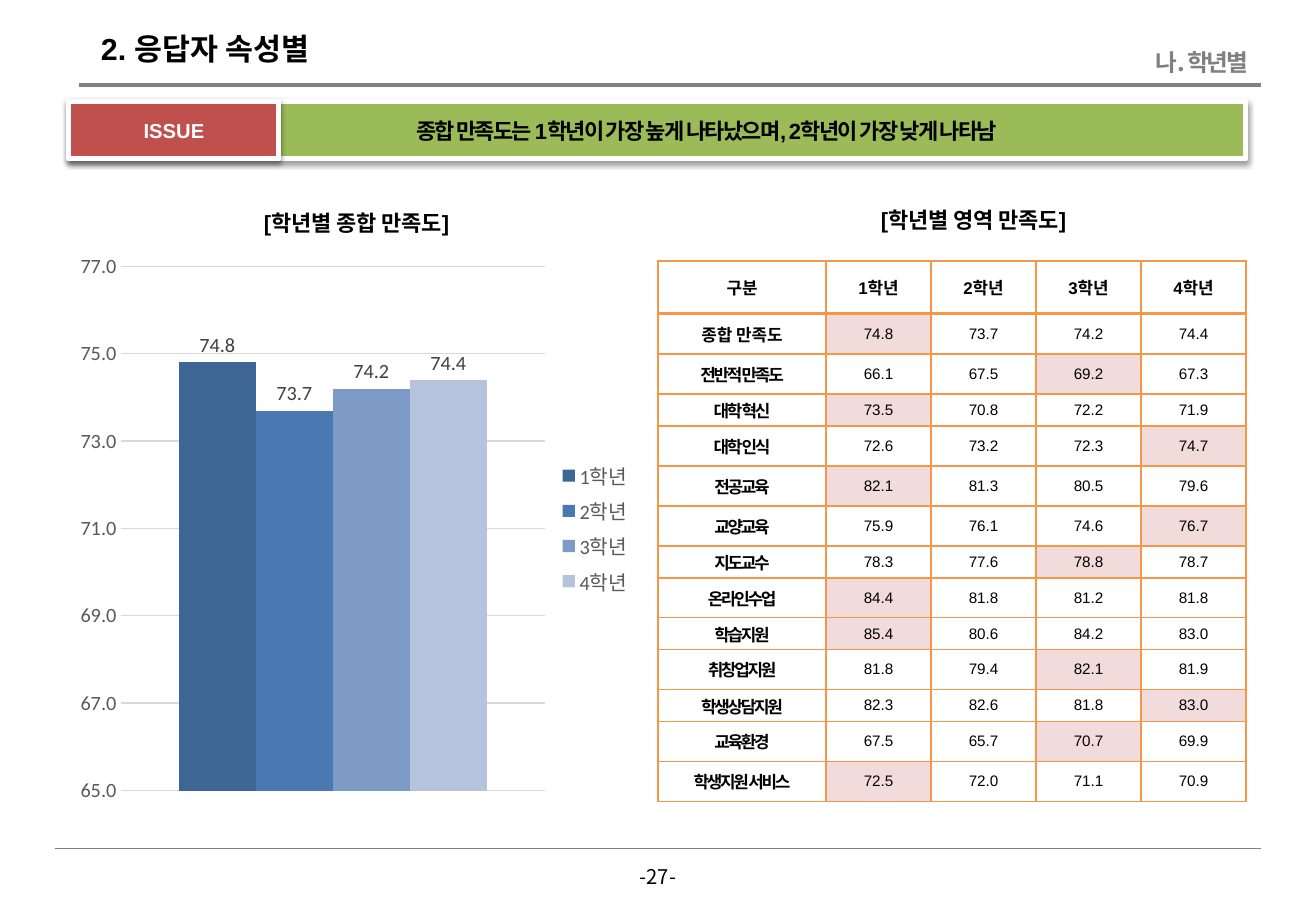
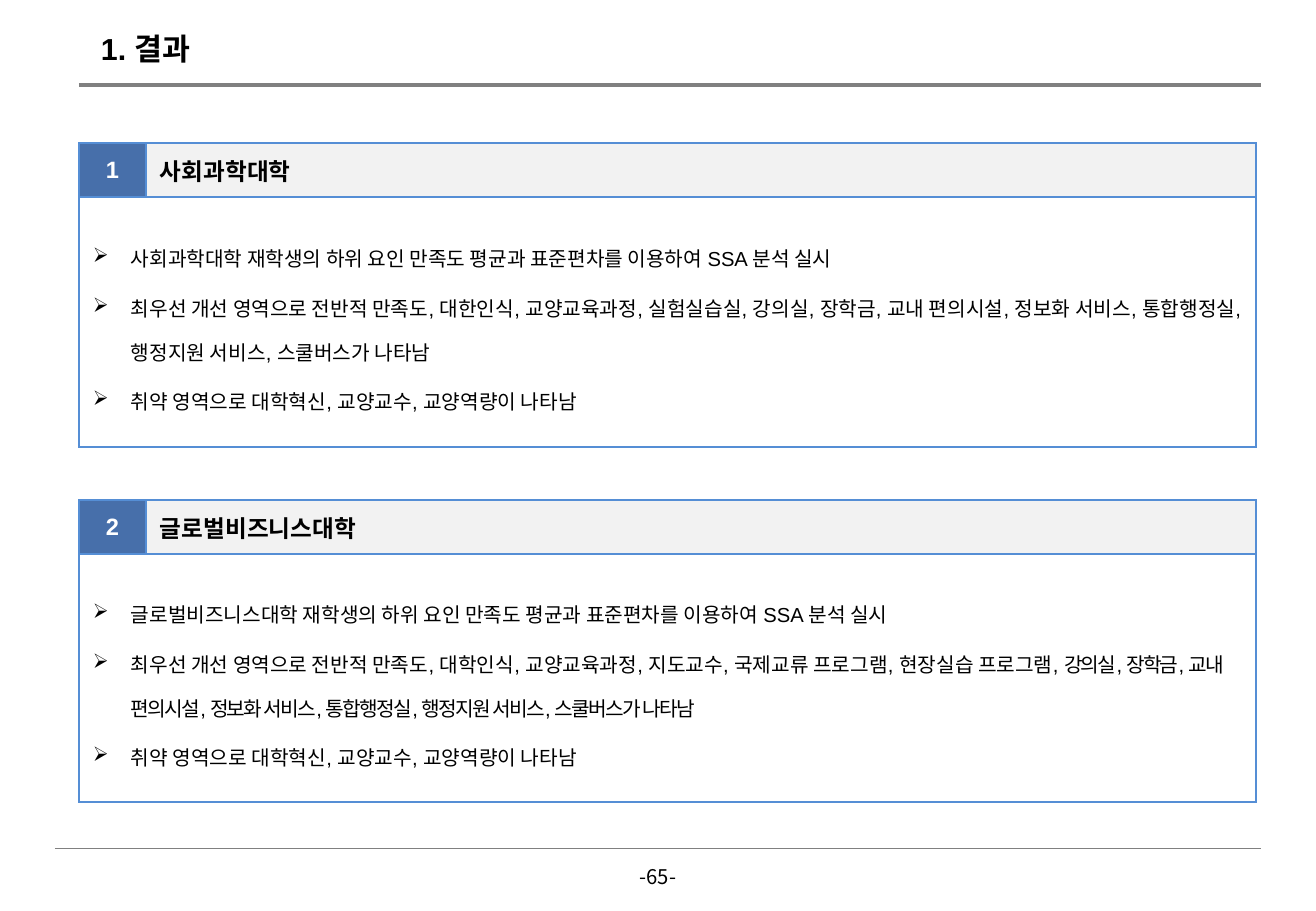
from lxml import etree
from pptx import Presentation
from pptx import util as u
from pptx.chart.data import CategoryChartData
from pptx.dml.color import RGBColor
from pptx.enum import chart as charts, shapes, text
from pptx.oxml import parse_xml
from pptx.oxml.ns import nsdecls, qn

# Colours and fonts
BLACK = RGBColor(0x00, 0x00, 0x00)
WHITE = RGBColor(0xFF, 0xFF, 0xFF)
GRAY = RGBColor(0x80, 0x80, 0x80)
PALE_GRAY = RGBColor(0xF2, 0xF2, 0xF2)
GRID_GRAY = RGBColor(0xD9, 0xD9, 0xD9)
AXIS_GRAY = RGBColor(0x59, 0x59, 0x59)
LABEL_GRAY = RGBColor(0x40, 0x40, 0x40)
GREEN = RGBColor(0x9B, 0xBB, 0x59)
RED = RGBColor(0xC0, 0x50, 0x4D)
PINK = RGBColor(0xF2, 0xDC, 0xDB)
ORANGE = RGBColor(0xF7, 0x96, 0x46)
SKY_BLUE = RGBColor(0x55, 0x8E, 0xD5)
BLUE = RGBColor(0x47, 0x6F, 0xAA)
SERIES_COLORS = [RGBColor(0x3E, 0x66, 0x95), RGBColor(0x4A, 0x79, 0xB1),
                 RGBColor(0x7E, 0x9B, 0xC8), RGBColor(0xB6, 0xC3, 0xDC)]
SANS, KOREAN, CHART_FONT = "Arial", "Noto Sans CJK KR", "Calibri"
LEFT, CENTER, RIGHT = text.PP_ALIGN.LEFT, text.PP_ALIGN.CENTER, text.PP_ALIGN.RIGHT
EMU_PER_PX = 914400 / 121.5

# Content of the grade slide
GRADES = ["1학년", "2학년", "3학년", "4학년"]
ISSUE = "종합 만족도는 1학년이 가장 높게 나타났으며, 2학년이 가장 낮게 나타남"
SCORES = [  # label, row height, score per grade
    ("종합 만족도", 40, (74.8, 73.7, 74.2, 74.4)),
    ("전반적 만족도", 40, (66.1, 67.5, 69.2, 67.3)),
    ("대학 혁신", 32, (73.5, 70.8, 72.2, 71.9)),
    ("대학 인식", 40, (72.6, 73.2, 72.3, 74.7)),
    ("전공교육", 40, (82.1, 81.3, 80.5, 79.6)),
    ("교양교육", 40, (75.9, 76.1, 74.6, 76.7)),
    ("지도교수", 32, (78.3, 77.6, 78.8, 78.7)),
    ("온라인수업", 40, (84.4, 81.8, 81.2, 81.8)),
    ("학습지원", 32, (85.4, 80.6, 84.2, 83.0)),
    ("취창업지원", 40, (81.8, 79.4, 82.1, 81.9)),
    ("학생상담지원", 32, (82.3, 82.6, 81.8, 83.0)),
    ("교육환경", 40, (67.5, 65.7, 70.7, 69.9)),
    ("학생지원 서비스", 40, (72.5, 72.0, 71.1, 70.9)),
]

# Content of the result slide: college, top, body height, bullets of (text, spacing) runs
WEAK_AREAS = [("취약 영역으로 대학혁신, 교양교수, 교양역량이 나타남", 0)]
COLLEGES = [
    ("사회과학대학", 143, 250, [
        [("사회과학대학 재학생의 하위 요인 만족도 평균과 표준편차를 이용하여 SSA 분석 실시", 0)],
        [("최우선 개선 영역으로 전반적 만족도, 대한인식, 교양교육과정, 실험실습실, 강의실, 장학금, "
          "교내 편의시설, 정보화 서비스, 통합행정실, 행정지원 서비스, 스쿨버스가 나타남", 0)],
        WEAK_AREAS]),
    ("글로벌비즈니스대학", 500, 248, [
        [("글로벌비즈니스대학 재학생의 하위 요인 만족도 평균과 표준편차를 이용하여 SSA 분석 실시", 0)],
        [("최우선 개선 영역으로 전반적 만족도, 대학인식, 교양교육과정, 지도교수, "
          "국제교류 프로그램, 현장실습 프로그램, ", 0),
         ("강의실, 장학금, 교내 편의시설, 정보화 서비스, 통합행정실, 행정지원 서비스, "
          "스쿨버스가 나타남", -1)],
        WEAK_AREAS]),
]


def px(value):
    return u.Emu(round(value * EMU_PER_PX))


def box(*lengths):
    return [px(length) for length in lengths]


# Text
def style(paragraph, size, color=BLACK, bold=True, font=SANS, align=CENTER, spacing=0):
    paragraph.alignment = align
    paragraph.font.size = u.Pt(size)
    paragraph.font.bold = bold
    paragraph.font.name = font
    paragraph.font.color.rgb = color
    if spacing:
        paragraph._p.pPr.find(qn("a:defRPr")).set("spc", str(round(spacing * 100)))


def add_text(slide, place, words, size, **look):
    frame = slide.shapes.add_textbox(*box(*place)).text_frame
    frame.word_wrap = True
    frame.vertical_anchor = text.MSO_ANCHOR.MIDDLE
    frame.text = words
    style(frame.paragraphs[0], size, **look)


def write_bullets(frame, bullets):
    for index, runs in enumerate(bullets):
        paragraph = frame.add_paragraph() if index else frame.paragraphs[0]
        properties = paragraph._p.get_or_add_pPr()
        properties.set("marL", str(px(38)))
        properties.set("indent", str(-px(38)))
        etree.SubElement(properties, qn("a:buChar")).set("char", "➢")
        paragraph.line_spacing = 1.5
        if index:
            paragraph.space_before = u.Pt(3)
        for words, spacing in runs:
            run = paragraph.add_run()
            run.text = words
            if spacing:
                run._r.get_or_add_rPr().set("spc", str(spacing * 100))
        style(paragraph, 12, bold=False, align=LEFT)


# Shared frame: rules, title and page number
def add_rule(slide, left, top, width):
    line = slide.shapes.add_connector(shapes.MSO_CONNECTOR.STRAIGHT, *box(left, top, 1261, top))
    line.line.color.rgb = GRAY
    line.line.width = u.Pt(width)
    etree.SubElement(line._element.spPr, qn("a:effectLst"))


def add_page(presentation, title, number):
    slide = presentation.slides.add_slide(presentation.slide_layouts[6])
    add_rule(slide, 79, 85, 2)
    add_rule(slide, 55, 848, 0.5)
    add_text(slide, (89, 24, 500, 49), title, 18, align=LEFT)
    add_text(slide, (608, 858, 100, 36), f"-{number}-", 12, bold=False, font=KOREAN)
    return slide


# Tables
def add_table(slide, left, top, widths, heights):
    table = slide.shapes.add_table(
        len(heights), len(widths), *box(left, top, sum(widths), sum(heights))).table
    table.first_row = table.horz_banding = False
    for column, width in zip(table.columns, widths):
        column.width = px(width)
    for row, height in zip(table.rows, heights):
        row.height = px(height)
    return table


def format_cell(cell, border, fill=None, insets=(0, 0), bottom=1):
    properties = cell._tc.get_or_add_tcPr()
    for side in "LRTB":
        width = u.Pt(bottom if side == "B" else 1)
        properties.append(parse_xml(
            f'<a:ln{side} {nsdecls("a")} w="{width}"><a:solidFill>'
            f'<a:srgbClr val="{border}"/></a:solidFill></a:ln{side}>'))
    if fill is None:
        cell.fill.background()
    else:
        cell.fill.solid()
        cell.fill.fore_color.rgb = fill
    cell.margin_left = cell.margin_right = px(insets[0])
    cell.margin_top = cell.margin_bottom = px(insets[1])
    cell.vertical_anchor = text.MSO_ANCHOR.MIDDLE


def write_cell(cell, words, size, **look):
    cell.text = words
    style(cell.text_frame.paragraphs[0], size, **look)


def add_score_table(slide):
    table = add_table(slide, 658, 261, [168] + [105] * len(GRADES),
                      [53] + [height for _, height, _ in SCORES])
    for column, words in enumerate(["구분"] + GRADES):
        cell = table.cell(0, column)
        format_cell(cell, ORANGE, insets=(0, 4), bottom=2)
        write_cell(cell, words, 10)
    for row, (label, _, scores) in enumerate(SCORES, 1):
        cell = table.cell(row, 0)
        format_cell(cell, ORANGE, insets=(4, 4))
        write_cell(cell, label, 10, spacing=0 if row == 1 else -1.3)
        for column, score in enumerate(scores, 1):
            cell = table.cell(row, column)
            # The best grade of each row is tinted
            format_cell(cell, ORANGE, PINK if score == max(scores) else None, (1, 1))
            write_cell(cell, f"{score:.1f}", 9, bold=False)


def add_college_table(slide, number, college, top, body_height, bullets):
    table = add_table(slide, 79, top, [67, 1110], [54, body_height])
    for cell, fill in zip(table.iter_cells(), (BLUE, PALE_GRAY, WHITE, WHITE)):
        format_cell(cell, SKY_BLUE, fill, (14, 10))
    write_cell(table.cell(0, 0), str(number), 14, color=WHITE)
    write_cell(table.cell(0, 1), college, 14, align=LEFT)
    table.cell(1, 0).merge(table.cell(1, 1))
    write_bullets(table.cell(1, 0).text_frame, bullets)


# Issue banner
def add_band(slide, width, fill, words, size, left_inset=12, **look):
    band = slide.shapes.add_shape(shapes.MSO_SHAPE.RECTANGLE, *box(69, 102, width, 57))
    band.fill.solid()
    band.fill.fore_color.rgb = fill
    band.line.color.rgb = WHITE
    band.line.width = u.Pt(3)
    band.shadow.inherit = False
    band._element.spPr.find(qn("a:effectLst")).append(parse_xml(
        f'<a:outerShdw {nsdecls("a")} blurRad="{u.Pt(3.1)}" dist="{u.Pt(1.6)}" dir="5400000" '
        'rotWithShape="0"><a:srgbClr val="000000"><a:alpha val="38000"/></a:srgbClr>'
        '</a:outerShdw>'))
    frame = band.text_frame
    frame.margin_left = px(left_inset)
    frame.vertical_anchor = text.MSO_ANCHOR.MIDDLE
    frame.text = words
    style(frame.paragraphs[0], size, **look)


# Chart
def set_font(font, size, color):
    font.name = CHART_FONT
    font.size = u.Pt(size)
    font.color.rgb = color


def add_score_chart(slide):
    data = CategoryChartData(number_format="###0.0")
    data.categories = ["1"]
    for grade, score in zip(GRADES, SCORES[0][2]):
        data.add_series(grade, [score])
    chart = slide.shapes.add_chart(
        charts.XL_CHART_TYPE.COLUMN_CLUSTERED, *box(69, 243, 575, 571), data).chart
    set_font(chart.font, 10, BLACK)
    chart.has_title = False
    chart.has_legend = True
    chart.legend.position = charts.XL_LEGEND_POSITION.RIGHT
    chart.legend.include_in_layout = False
    set_font(chart.legend.font, 12, AXIS_GRAY)

    chart.category_axis.visible = False
    axis = chart.value_axis
    axis.minimum_scale, axis.maximum_scale, axis.major_unit = 65, 77, 2
    axis.major_tick_mark = charts.XL_TICK_MARK.NONE
    axis.format.line.fill.background()
    axis.major_gridlines.format.line.color.rgb = GRID_GRAY
    axis.major_gridlines.format.line.width = u.Pt(0.75)
    axis.tick_labels.number_format = "###0.0"
    axis.tick_labels.number_format_is_linked = False
    set_font(axis.tick_labels.font, 12, AXIS_GRAY)

    plot = chart.plots[0]
    plot.gap_width, plot.overlap = 150, 0
    plot.vary_by_categories = False
    for series, color in zip(plot.series, SERIES_COLORS):
        series.format.fill.solid()
        series.format.fill.fore_color.rgb = color
        labels = series.data_labels
        labels.show_value = True
        labels.position = charts.XL_LABEL_POSITION.OUTSIDE_END
        set_font(labels.font, 12, LABEL_GRAY)


def main():
    presentation = Presentation()
    presentation.slide_width, presentation.slide_height = box(1316, 911)

    slide = add_page(presentation, "2. 응답자 속성별", 27)
    add_text(slide, (672, 41, 588, 42), "나. 학년별", 14,
             color=GRAY, font=KOREAN, align=RIGHT, spacing=-1.5)
    add_band(slide, 1177, GREEN, ISSUE, 13, left_inset=110, spacing=-1)
    add_band(slide, 210, RED, "ISSUE", 12, color=WHITE)
    add_text(slide, (69, 203, 575, 39), "[학년별 종합 만족도]", 13)
    add_text(slide, (686, 200, 575, 39), "[학년별 영역 만족도]", 13)
    add_score_table(slide)
    add_score_chart(slide)

    slide = add_page(presentation, "1. 결과", 65)
    for number, college in enumerate(COLLEGES, 1):
        add_college_table(slide, number, *college)

    presentation.save("out.pptx")


if __name__ == "__main__":
    main()
